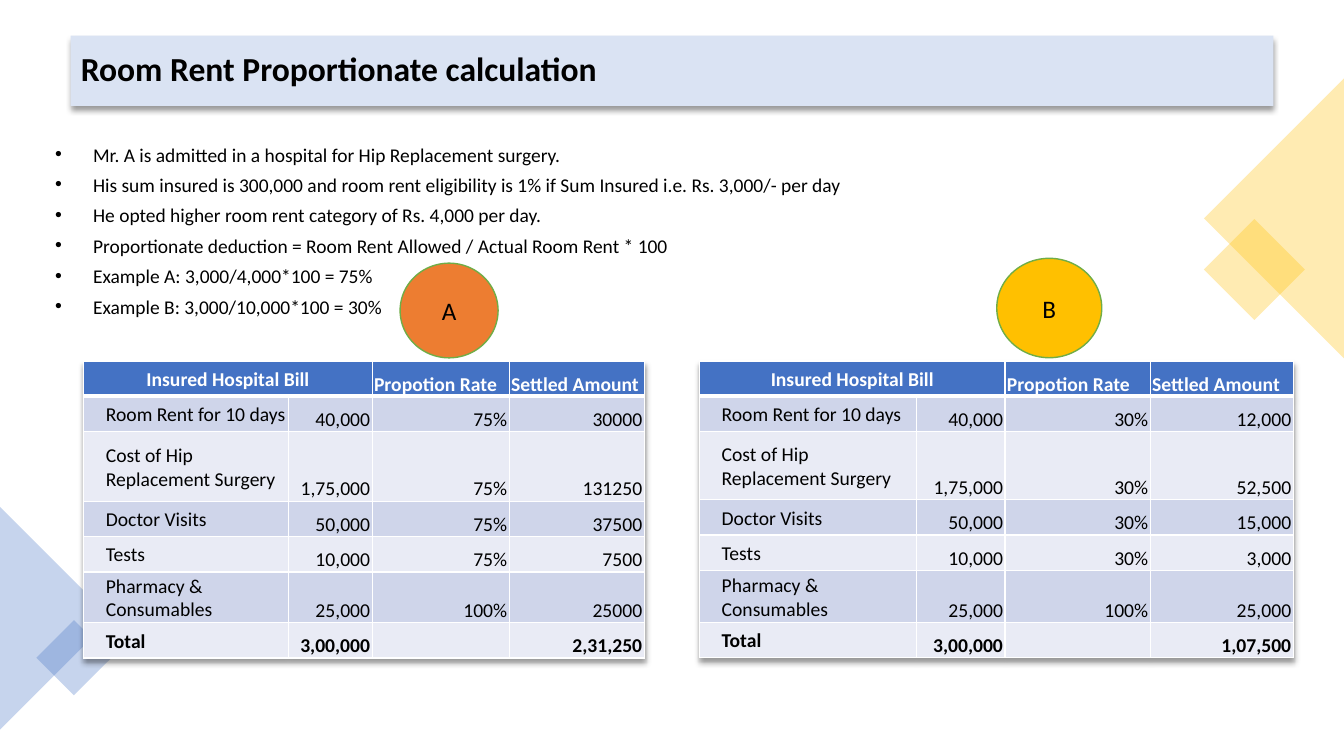
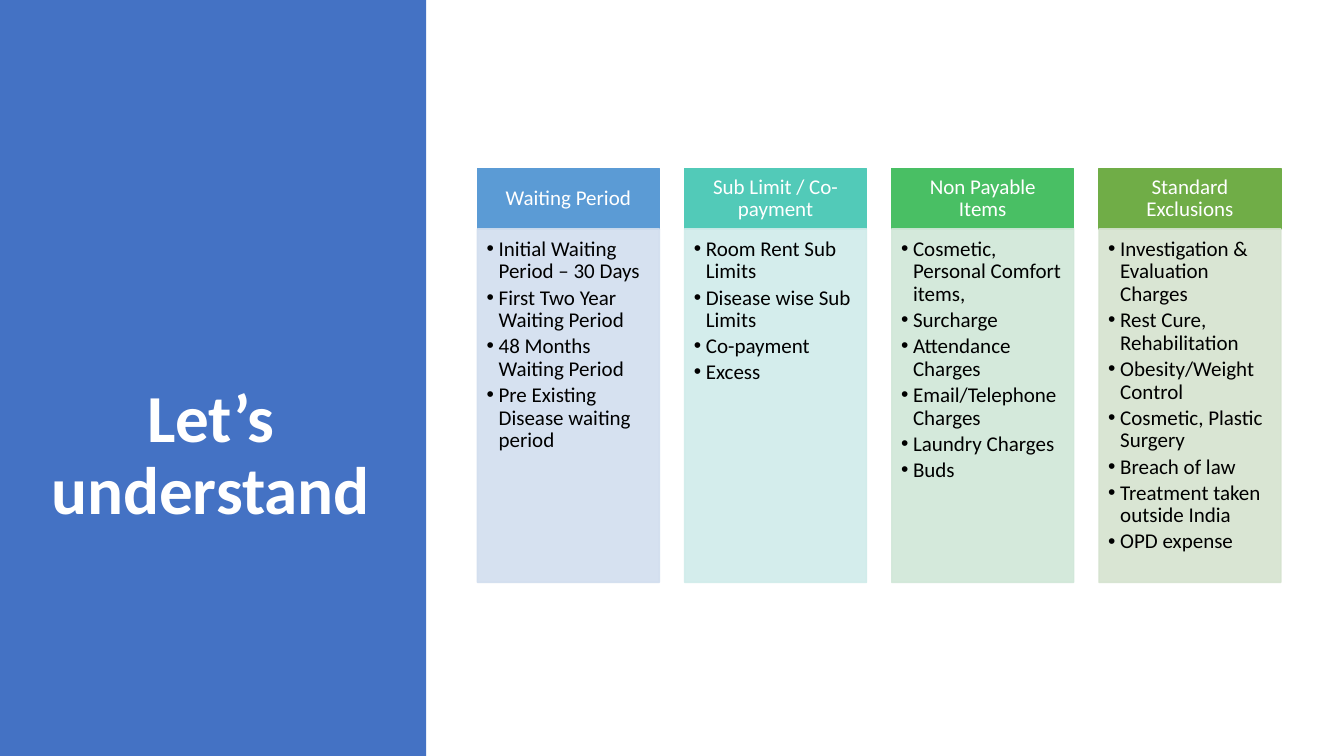
"""Build two slides on room rent deductions and on the limits of health cover."""

import dataclasses
import typing

import lxml.etree
import pptx
import pptx.dml.color
import pptx.enum.shapes
import pptx.enum.text
import pptx.oxml.ns
import pptx.util

Pt = pptx.util.Pt
qn = pptx.oxml.ns.qn
Shape = pptx.enum.shapes.MSO_SHAPE
Align = pptx.enum.text.PP_ALIGN
Anchor = pptx.enum.text.MSO_ANCHOR


@dataclasses.dataclass(frozen=True)
class Theme:
    font: str = "Calibri"
    black: str = "000000"
    white: str = "FFFFFF"
    blue: str = "4472C4"
    gold: str = "FFC000"
    orange: str = "ED7D31"
    green: str = "70AD47"
    title_band: str = "DAE3F3"
    odd_row: str = "CFD5EA"
    even_row: str = "E9EBF5"
    title_size: float = 24
    display_size: float = 48
    bullet_size: float = 13.9
    table_size: float = 14
    badge_size: float = 18
    card_size: float = 15


class Box(typing.NamedTuple):
    left: float
    top: float
    width: float
    height: float


class Insets(typing.NamedTuple):
    left: float
    top: float
    right: float
    bottom: float


@dataclasses.dataclass(frozen=True)
class TextStyle:
    size: float
    color: str = "000000"
    bold: bool = False
    align: Align = Align.LEFT
    line_spacing: float = 1.0
    before: float = 0
    after: float = 0
    hanging: float = 0


class Decoration(typing.NamedTuple):
    kind: Shape
    box: Box
    rotation: float
    color: str


class Claim(typing.NamedTuple):
    name: str
    badge: Box
    badge_color: str
    left: float
    columns: tuple[float, ...]
    rows: tuple[float, ...]
    rates: tuple[str, ...]
    settled: tuple[str, ...]


class Card(typing.NamedTuple):
    heading: str
    color: str
    tint: str
    items: tuple[str, ...]


THEME = Theme()
TABLE_TOP = 257.8
CELL_INSETS = Insets(1.4, 1.4, 1.4, 0)
LABEL_INSETS = Insets(15.8, 1.4, 1.2, 0)

DECORATIONS = (
    Decoration(Shape.RECTANGLE, Box(870.5, 167, 51, 51), 45, THEME.gold),
    Decoration(Shape.ISOSCELES_TRIANGLE, Box(810, 106, 200, 100), 270, THEME.gold),
    Decoration(Shape.ISOSCELES_TRIANGLE, Box(-39.8, 401.8, 159.2, 79.6), 90, THEME.blue),
    Decoration(Shape.RECTANGLE, Box(33.8, 450.8, 38, 38), 45, THEME.blue),
)

FACTS = (
    "Mr. A is admitted in a hospital for Hip Replacement surgery.",
    "His sum insured is 300,000 and room rent eligibility is 1% if Sum Insured i.e. Rs. 3,000/- per day",
    "He opted higher room rent category of Rs. 4,000 per day.",
    "Proportionate deduction = Room Rent Allowed / Actual Room Rent * 100",
    "Example A: 3,000/4,000*100 = 75%",
    "Example B: 3,000/10,000*100 = 30%",
)

TABLE_HEADINGS = ("Insured Hospital Bill", "", "Propotion Rate", "Settled Amount")
BILL = (
    ("Room Rent for 10 days", "40,000"),
    ("Cost of Hip Replacement Surgery", "1,75,000"),
    ("Doctor Visits", "50,000"),
    ("Tests", "10,000"),
    ("Pharmacy & Consumables", "25,000"),
    ("Total", "3,00,000"),
)
CLAIMS = (
    Claim("A", Box(285.8, 188, 70, 67.6), THEME.orange, 59.8,
          (146.5, 59.5, 97.9, 96.5), (25.3, 25.3, 49.6, 25.3, 25.3, 36.2, 25.3),
          ("75%", "75%", "75%", "75%", "100%", ""),
          ("30000", "131250", "37500", "7500", "25000", "2,31,250")),
    Claim("B", Box(712, 184.5, 75, 71), THEME.gold, 499.7,
          (154.8, 63.4, 103.7, 102.2), (25.2, 25.2, 48.8, 25.2, 25.2, 37.2, 25.2),
          ("30%", "30%", "30%", "30%", "100%", ""),
          ("12,000", "52,500", "15,000", "3,000", "25,000", "1,07,500")),
)

CARDS = (
    Card("Waiting Period", "5B9BD5", "D2DEEF",
         ("Initial Waiting Period – 30 Days", "First Two Year Waiting Period",
          "48 Months Waiting Period", "Pre Existing Disease waiting period")),
    Card("Sub Limit / Co-payment", "52CAB8", "D0ECEA",
         ("Room Rent Sub Limits", "Disease wise Sub Limits", "Co-payment", "Excess")),
    Card("Non Payable Items", "49BF64", "D0E7D8",
         ("Cosmetic, Personal Comfort items,", "Surcharge", "Attendance Charges",
          "Email/Telephone Charges", "Laundry Charges", "Buds")),
    Card("Standard Exclusions", THEME.green, "D5E3CF",
         ("Investigation & Evaluation Charges", "Rest Cure, Rehabilitation",
          "Obesity/Weight Control", "Cosmetic, Plastic Surgery", "Breach of law",
          "Treatment taken outside India", "OPD expense")),
)


def rgb(color: str) -> pptx.dml.color.RGBColor:
    return pptx.dml.color.RGBColor.from_string(color)


def add_child(parent, tag: str, **attributes: object):
    values = {name: str(value) for name, value in attributes.items()}
    return lxml.etree.SubElement(parent, qn(tag), values)


def add_shadow(properties, index: int) -> None:
    effects = add_child(properties, "a:effectLst")
    properties.insert(index, effects)
    shadow = add_child(effects, "a:outerShdw", blurRad=Pt(4), dist=Pt(3),
                       dir=90 * 60000, algn="t", rotWithShape=0)
    color = add_child(shadow, "a:srgbClr", val=THEME.black)
    add_child(color, "a:alpha", val=40000)


def place(shape, box: Box) -> None:
    shape.left, shape.top, shape.width, shape.height = (Pt(length) for length in box)


def set_text(frame, text: str, style: TextStyle) -> None:
    frame.word_wrap = True
    frame.text = text
    for para in frame.paragraphs:
        para.alignment = style.align
        para.line_spacing = style.line_spacing
        para.space_before = Pt(style.before)
        para.space_after = Pt(style.after)
        if style.hanging:
            properties = para._p.get_or_add_pPr()
            properties.set("marL", str(Pt(style.hanging)))
            properties.set("indent", str(-Pt(style.hanging)))
            add_child(properties, "a:buFont", typeface="Arial")
            add_child(properties, "a:buChar", char="•")
        for span in para.runs:
            span.font.name = THEME.font
            span.font.size = Pt(style.size)
            span.font.bold = style.bold
            span.font.color.rgb = rgb(style.color)


def set_insets(target, insets: Insets) -> None:
    target.margin_left, target.margin_top, target.margin_right, target.margin_bottom = (
        Pt(length) for length in insets)


def set_title(page, text: str, box: Box, style: TextStyle, anchor: Anchor):
    title = page.shapes.title
    place(title, box)
    set_text(title.text_frame, text, style)
    title.text_frame.auto_size = pptx.enum.text.MSO_AUTO_SIZE.NONE
    title.text_frame.vertical_anchor = anchor
    return title


def add_figure(page, kind: Shape, box: Box, fill: str, line: str = "", opacity: int = 100):
    figure = page.shapes.add_shape(kind, *(Pt(length) for length in box))
    figure.shadow.inherit = False
    figure.fill.solid()
    figure.fill.fore_color.rgb = rgb(fill)
    if line:
        figure.line.color.rgb = rgb(line)
        figure.line.width = Pt(1)
    else:
        figure.line.fill.background()
    if opacity < 100:
        for color in list(figure.element.spPr.iter(qn("a:srgbClr"))):
            add_child(color, "a:alpha", val=opacity * 1000)
    return figure


def style_cell(cell, row: int) -> None:
    properties = cell._tc.get_or_add_tcPr()
    widths = {"a:lnL": 1, "a:lnR": 1, "a:lnT": 3 if row == 1 else 1, "a:lnB": 3 if row == 0 else 1}
    for tag, width in widths.items():
        fill = add_child(add_child(properties, tag, w=Pt(width)), "a:solidFill")
        add_child(fill, "a:srgbClr", val=THEME.white)
    cell.fill.solid()
    band = THEME.odd_row if row % 2 else THEME.even_row
    cell.fill.fore_color.rgb = rgb(THEME.blue if row == 0 else band)


def add_claim_table(page, claim: Claim) -> None:
    body = [(*item, rate, paid) for item, rate, paid in zip(BILL, claim.rates, claim.settled)]
    lines = [TABLE_HEADINGS, *body]
    box = Box(claim.left, TABLE_TOP, sum(claim.columns), sum(claim.rows))
    table = page.shapes.add_table(
        len(lines), len(claim.columns), *(Pt(length) for length in box)).table
    add_shadow(table._tbl.tblPr, 0)
    for column, width in zip(table.columns, claim.columns):
        column.width = Pt(width)
    for row, height in zip(table.rows, claim.rows):
        row.height = Pt(height)
    table.cell(0, 0).merge(table.cell(0, 1))
    for row, values in enumerate(lines):
        header = row == 0
        for column, value in enumerate(values):
            cell = table.cell(row, column)
            style_cell(cell, row)
            label = column == 0
            set_insets(cell, LABEL_INSETS if label and not header else CELL_INSETS)
            cell.vertical_anchor = Anchor.MIDDLE if label else Anchor.BOTTOM
            if not value:
                continue
            if header:
                align = Align.CENTER if label else Align.LEFT
            else:
                align = Align.LEFT if label else Align.RIGHT
            set_text(cell.text_frame, value, TextStyle(
                THEME.table_size, THEME.white if header else THEME.black,
                header or row == len(lines) - 1, align))


def add_card(page, card: Card, left: float) -> None:
    heading = add_figure(page, Shape.RECTANGLE, Box(left, 120.5, 130, 43), card.color, card.color)
    set_insets(heading.text_frame, Insets(8.6, 5, 8.6, 5))
    heading.text_frame.vertical_anchor = Anchor.MIDDLE
    set_text(heading.text_frame, card.heading, TextStyle(
        THEME.card_size, THEME.white, align=Align.CENTER, line_spacing=0.9))
    panel = add_figure(page, Shape.RECTANGLE, Box(left, 163.5, 130, 252.5),
                       card.tint, card.tint, 90)
    set_insets(panel.text_frame, Insets(6.6, 6.6, 8.6, 9.4))
    panel.text_frame.vertical_anchor = Anchor.TOP
    set_text(panel.text_frame, "\n".join(card.items), TextStyle(
        THEME.card_size, line_spacing=0.9, after=2.4, hanging=8.6))


def build_calculation(page) -> None:
    title = set_title(page, "Room Rent Proportionate calculation", Box(50.5, 25.5, 859, 50.2),
                      TextStyle(THEME.title_size, bold=True, line_spacing=0.9), Anchor.MIDDLE)
    title.fill.solid()
    title.fill.fore_color.rgb = rgb(THEME.title_band)
    add_shadow(title.element.spPr, len(title.element.spPr))
    for item in DECORATIONS:
        figure = add_figure(page, item.kind, item.box, item.color, opacity=30)
        figure.rotation = item.rotation
    facts = page.shapes.add_textbox(*(Pt(length) for length in Box(32.4, 103, 854.6, 130.3)))
    set_text(facts.text_frame, "\n".join(FACTS), TextStyle(
        THEME.bullet_size, line_spacing=0.7, before=10, hanging=27))
    for claim in CLAIMS:
        add_claim_table(page, claim)
        badge = add_figure(page, Shape.OVAL, claim.badge, claim.badge_color, THEME.green)
        badge.text_frame.vertical_anchor = Anchor.MIDDLE
        set_text(badge.text_frame, claim.name, TextStyle(THEME.badge_size, align=Align.CENTER))


def build_limits(page) -> None:
    title = set_title(page, "Let’s understand", Box(24.5, 270.7, 252, 216), TextStyle(
        THEME.display_size, THEME.white, True, Align.CENTER, 0.9), Anchor.TOP)
    side = add_figure(page, Shape.RECTANGLE, Box(0, 0, 304.5, 540), THEME.blue)
    title.element.addprevious(side.element)
    for index, card in enumerate(CARDS):
        add_card(page, card, 341 + 148 * index)


def main() -> None:
    deck = pptx.Presentation()
    deck.slide_width, deck.slide_height = Pt(960), Pt(540)
    for build in (build_calculation, build_limits):
        build(deck.slides.add_slide(deck.slide_layouts[5]))
    deck.save("out.pptx")


if __name__ == "__main__":
    main()
